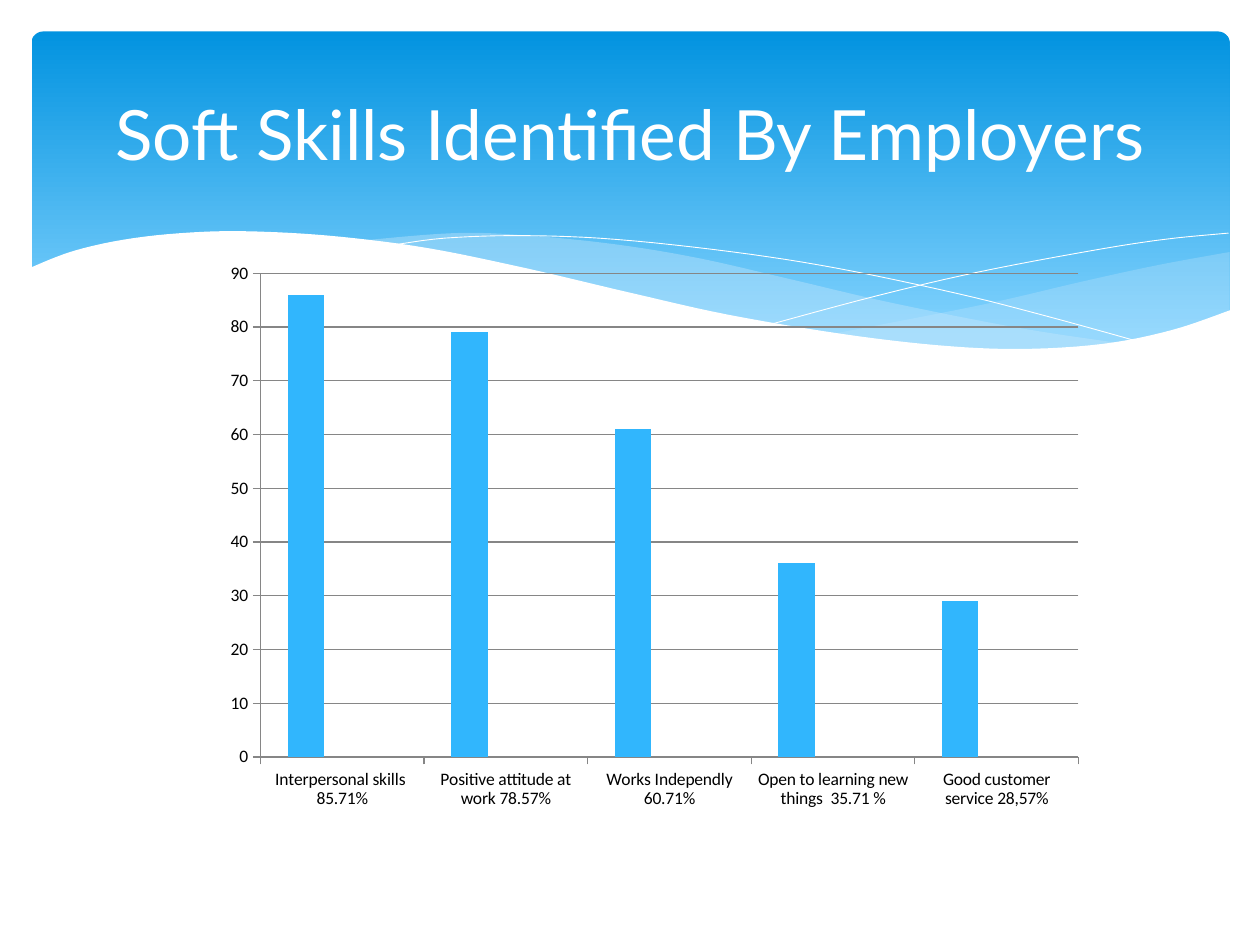
from pptx import Presentation
from pptx.chart.data import CategoryChartData
from pptx.dml.color import RGBColor
from pptx.enum.chart import XL_CHART_TYPE as ChartType, XL_TICK_MARK as Tick
from pptx.enum.shapes import MSO_SHAPE as Shape
from pptx.enum.text import MSO_ANCHOR as Anchor, PP_ALIGN as Align
from pptx.oxml.ns import qn
from pptx.util import Inches, Pt
from lxml.etree import SubElement

WHITE = RGBColor(0xFF, 0xFF, 0xFF)
BLACK = RGBColor(0, 0, 0)
GREY = RGBColor(0x86, 0x86, 0x86)
DEEP_BLUE = RGBColor(0x02, 0x93, 0xE0)
SKY_BLUE = RGBColor(0x83, 0xD3, 0xFE)
MIST = RGBColor(0xC6, 0xE7, 0xFC)
SERIES_COLORS = [RGBColor(0x31, 0xB6, 0xFD), RGBColor(0x45, 0x84, 0xD3),
                 RGBColor(0x5B, 0xD0, 0x78)]
COLS, ROWS = 10, 7.5  # slide grid

# Curves, as (column, row) points
RIGHT_BAND = [
    [(9.76, 2), (9.21, 2.1), (8.61, 2.23), (7.79, 2.42), (6.61, 2.65)],
    [(6.61, 2.65), (7.32, 2.74), (8.03, 2.78), (8.72, 2.74), (9.28, 2.63), (9.76, 2.47)],
]
LEFT_BAND = [
    [(8.93, 2.73), (8.07, 2.6), (7.06, 2.4), (6.29, 2.22), (5.55, 2.05), (4.89, 1.94),
     (4.2, 1.87), (3.61, 1.85), (2.86, 1.91)],
    [(2.86, 1.91), (3.62, 2.03), (4.49, 2.22), (5.66, 2.48), (6.5, 2.64), (7.22, 2.74),
     (7.96, 2.78), (8.48, 2.77), (8.93, 2.73)],
]
FALLING_LINE = [[(3.09, 1.95), (3.53, 1.89), (4.16, 1.87), (4.89, 1.9), (5.82, 2),
                 (6.65, 2.13), (7.6, 2.33), (8.31, 2.51), (9.07, 2.72)]]
RISING_LINE = [[(6.13, 2.57), (6.95, 2.35), (7.76, 2.16), (8.66, 1.99), (9.24, 1.9),
                (9.75, 1.85)]]
WHITE_WAVE = [
    [(9.77, 2.46), (9.3, 2.62), (8.75, 2.73), (8.09, 2.77), (7.44, 2.74), (6.68, 2.65),
     (5.79, 2.5), (5.03, 2.33), (4.18, 2.13), (3.4, 1.97), (2.71, 1.88), (2.11, 1.84),
     (1.61, 1.84), (1.06, 1.89), (0.59, 1.99), (0.23, 2.13)],
    [(0.23, 3.29), (9.77, 3.29)],
]


def smooth(points, steps=6):
    """Catmull-Rom curve through the points."""
    if len(points) < 3:
        return points
    ends = [points[0], *points, points[-1]]
    curve = [points[0]]
    for a, b, c, d in zip(ends, ends[1:], ends[2:], ends[3:]):
        for i in range(1, steps + 1):
            t = i / steps
            curve.append(tuple(
                q + t * (r - p + t * (2 * p - 5 * q + 4 * r - s
                                      + t * (3 * q - p - 3 * r + s))) / 2
                for p, q, r, s in zip(a, b, c, d)))
    return curve


class Deck:
    title_font, chart_font = "Lato", "Calibri"
    title_size, chart_size = Pt(39.6), Pt(10)

    def __init__(self, prs):
        self.col, self.row = prs.slide_width / COLS, prs.slide_height / ROWS
        self.s = prs.slides.add_slide(prs.slide_layouts[6])

    def at(self, *lengths):
        return [round(n * (self.row if i % 2 else self.col)) for i, n in enumerate(lengths)]

    def banner(self, box, top, bottom):
        sp = self.s.shapes.add_shape(Shape.ROUNDED_RECTANGLE, *self.at(*box))
        sp.adjustments[0] = 0.034
        sp.shadow.inherit = False
        sp.line.fill.background()
        sp.fill.gradient()
        sp.fill.gradient_angle = 270
        for stop, color, pos in zip(sp.fill.gradient_stops, (top, bottom), (0, 0.9)):
            stop.color.rgb, stop.position = color, pos

    def outline(self, curves, closed):
        points = [self.at(*pt) for curve in curves for pt in smooth(curve)]
        builder = self.s.shapes.build_freeform(*points[0])
        builder.add_line_segments(points[1:], close=closed)
        sp = builder.convert_to_shape()
        sp.shadow.inherit = False
        return sp

    def area(self, curves, color, opacity=100):
        sp = self.outline(curves, True)
        sp.line.fill.background()
        sp.fill.solid()
        sp.fill.fore_color.rgb = color
        if opacity < 100:
            clr = next(sp.fill._xPr.iter(qn("a:srgbClr")))
            SubElement(clr, qn("a:alpha")).set("val", str(opacity * 1000))

    def curve(self, curves, color):
        sp = self.outline(curves, False)
        sp.fill.background()
        sp.line.color.rgb = color
        sp.line.width = Pt(0.5)

    def title(self, box, text):
        tf = self.s.shapes.add_textbox(*self.at(*box)).text_frame
        tf.word_wrap = True
        tf.vertical_anchor = Anchor.MIDDLE
        tf.text = text
        p = tf.paragraphs[0]
        p.alignment = Align.CENTER
        font = p.runs[0].font
        font.name, font.size, font.color.rgb = self.title_font, self.title_size, WHITE

    def column_chart(self, box, categories, series):
        data = CategoryChartData()
        data.categories = categories
        for name, values in series:
            data.add_series(name, values)
        chart = self.s.shapes.add_chart(
            ChartType.COLUMN_CLUSTERED, *self.at(*box), data).chart
        chart.has_legend = chart.has_title = False
        font = chart.font
        font.name, font.size, font.color.rgb = self.chart_font, self.chart_size, BLACK
        plot = chart.plots[0]
        plot.gap_width, plot.overlap, plot.vary_by_categories = 150, 0, False
        for ser, color in zip(plot.series, SERIES_COLORS):
            ser.format.fill.solid()
            ser.format.fill.fore_color.rgb = color
        value = chart.value_axis
        value.minimum_scale, value.maximum_scale, value.major_unit = 0, 90, 10
        value.has_major_gridlines = True
        for axis in (chart.category_axis, value):
            axis.major_tick_mark = Tick.OUTSIDE
            axis.format.line.color.rgb = GREY
        value.major_gridlines.format.line.color.rgb = GREY


def main():
    prs = Presentation()
    prs.slide_width, prs.slide_height = Inches(COLS), Inches(ROWS)
    deck = Deck(prs)

    # Banner with waves
    deck.banner((0.25, 0.25, 9.51, 2.7), DEEP_BLUE, SKY_BLUE)
    deck.area(RIGHT_BAND, MIST, 29)
    deck.area(LEFT_BAND, MIST, 40)
    deck.curve(FALLING_LINE, WHITE)
    deck.curve(RISING_LINE, WHITE)
    deck.area(WHITE_WAVE, WHITE)

    # Title and chart
    deck.title((0.5, 0.37, 9, 1.37), "Soft Skills Identified By Employers")
    skills = {
        "Interpersonal skills  85.71%": 86,
        "Positive attitude at work 78.57%": 79,
        "Works Independly 60.71%": 61,
        "Open to learning new things  35.71 %": 36,
        "Good customer service 28,57%": 29,
    }
    empty = [None] * len(skills)
    deck.column_chart((1.69, 2, 7.01, 4.51), list(skills), [
        ("Series 1", list(skills.values())), ("Series 2", empty), ("Series 3", empty)])

    prs.save("out.pptx")


if __name__ == "__main__":
    main()
